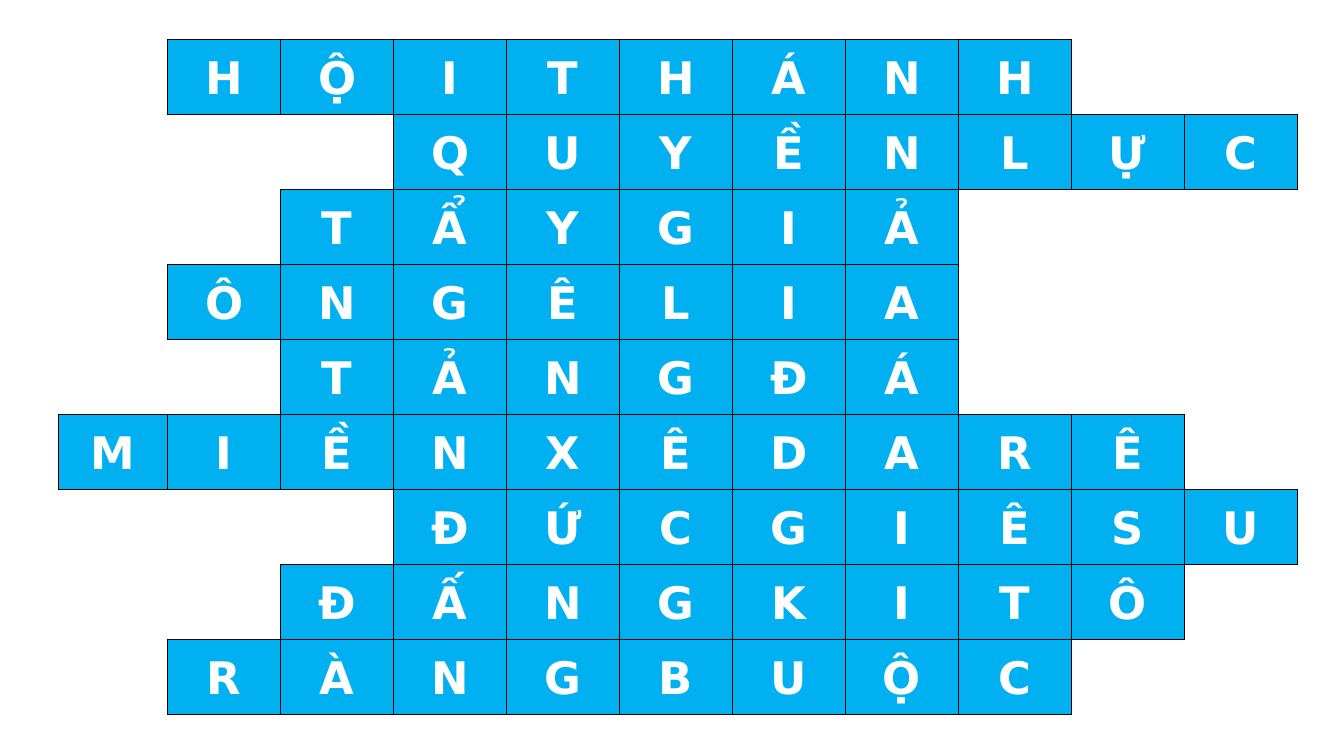
from dataclasses import dataclass

from lxml.etree import SubElement
from pptx import Presentation
from pptx.dml.color import RGBColor
from pptx.enum.text import MSO_ANCHOR, PP_ALIGN
from pptx.oxml.ns import qn
from pptx.table import Table, _Cell as Cell
from pptx.util import Pt

WHITE = RGBColor(0xFF, 0xFF, 0xFF)
BLACK = RGBColor(0x00, 0x00, 0x00)
SKY_BLUE = RGBColor(0x00, 0xB0, 0xF0)

COLUMN_COUNT = 11
LEFT, TOP = 41.9, 28.3
FIRST_COLUMN_WIDTH, COLUMN_WIDTH, ROW_HEIGHT = 77.9, 80.7, 53.55

CELL_FORMAT = {
    "vertical_anchor": MSO_ANCHOR.MIDDLE,
    "margin_left": Pt(5),
    "margin_right": Pt(5),
    "margin_top": Pt(0),
    "margin_bottom": Pt(0),
}
PARAGRAPH_FORMAT = {"alignment": PP_ALIGN.CENTER, "line_spacing": 1.07}
FONT_FORMAT = {"name": "DejaVu Sans", "size": Pt(32), "bold": True}

# Border tag and the (row, column) step to the neighbour on that side
SIDES = {"a:lnL": (0, -1), "a:lnR": (0, 1), "a:lnT": (-1, 0), "a:lnB": (1, 0)}


@dataclass(frozen=True)
class Answer:
    start: int
    letters: str

    def covers(self, column: int) -> bool:
        return self.start <= column < self.start + len(self.letters)


ANSWERS = [
    Answer(1, "HỘITHÁNH"),
    Answer(3, "QUYỀNLỰC"),
    Answer(2, "TẨYGIẢ"),
    Answer(1, "ÔNGÊLIA"),
    Answer(2, "TẢNGĐÁ"),
    Answer(0, "MIỀNXÊDARÊ"),
    Answer(3, "ĐỨCGIÊSU"),
    Answer(2, "ĐẤNGKITÔ"),
    Answer(1, "RÀNGBUỘC"),
]


def apply_format(target: object, values: dict) -> None:
    for name, value in values.items():
        setattr(target, name, value)


def has_letter(row: int, column: int) -> bool:
    return 0 <= row < len(ANSWERS) and ANSWERS[row].covers(column)


def write_letter(cell: Cell, letter: str) -> None:
    apply_format(cell, CELL_FORMAT)
    cell.fill.solid()
    cell.fill.fore_color.rgb = SKY_BLUE
    paragraph = cell.text_frame.paragraphs[0]
    apply_format(paragraph, PARAGRAPH_FORMAT)
    run = paragraph.add_run()
    run.text = letter
    apply_format(run.font, FONT_FORMAT)
    run.font.color.rgb = WHITE


def draw_borders(cell: Cell, row: int, column: int) -> None:
    """Rule every side that touches a letter and clear the others."""
    properties = cell._tc.get_or_add_tcPr()
    for position, (tag, (down, right)) in enumerate(SIDES.items()):
        line = SubElement(properties, qn(tag), w=str(Pt(1)))
        properties.insert(position, line)
        if has_letter(row, column) or has_letter(row + down, column + right):
            fill = SubElement(line, qn("a:solidFill"))
            SubElement(fill, qn("a:srgbClr"), val=str(BLACK))
        else:
            SubElement(line, qn("a:noFill"))


def fill_crossword(table: Table) -> None:
    for row, answer in enumerate(ANSWERS):
        for column in range(COLUMN_COUNT):
            cell = table.cell(row, column)
            if answer.covers(column):
                write_letter(cell, answer.letters[column - answer.start])
            else:
                cell.fill.background()
            draw_borders(cell, row, column)


def main() -> None:
    presentation = Presentation()
    presentation.slide_width = Pt(960)
    presentation.slide_height = Pt(540)
    slide = presentation.slides.add_slide(presentation.slide_layouts[6])

    # Crossword grid
    width = FIRST_COLUMN_WIDTH + (COLUMN_COUNT - 1) * COLUMN_WIDTH
    crossword = slide.shapes.add_table(
        len(ANSWERS), COLUMN_COUNT, Pt(LEFT), Pt(TOP),
        Pt(width), Pt(len(ANSWERS) * ROW_HEIGHT),
    )
    table = crossword.table
    apply_format(table, {"first_row": False, "horz_banding": False})
    for index, column in enumerate(table.columns):
        column.width = Pt(COLUMN_WIDTH if index else FIRST_COLUMN_WIDTH)
    for row in table.rows:
        row.height = Pt(ROW_HEIGHT)

    # Answers
    fill_crossword(table)
    presentation.save("out.pptx")


if __name__ == "__main__":
    main()
